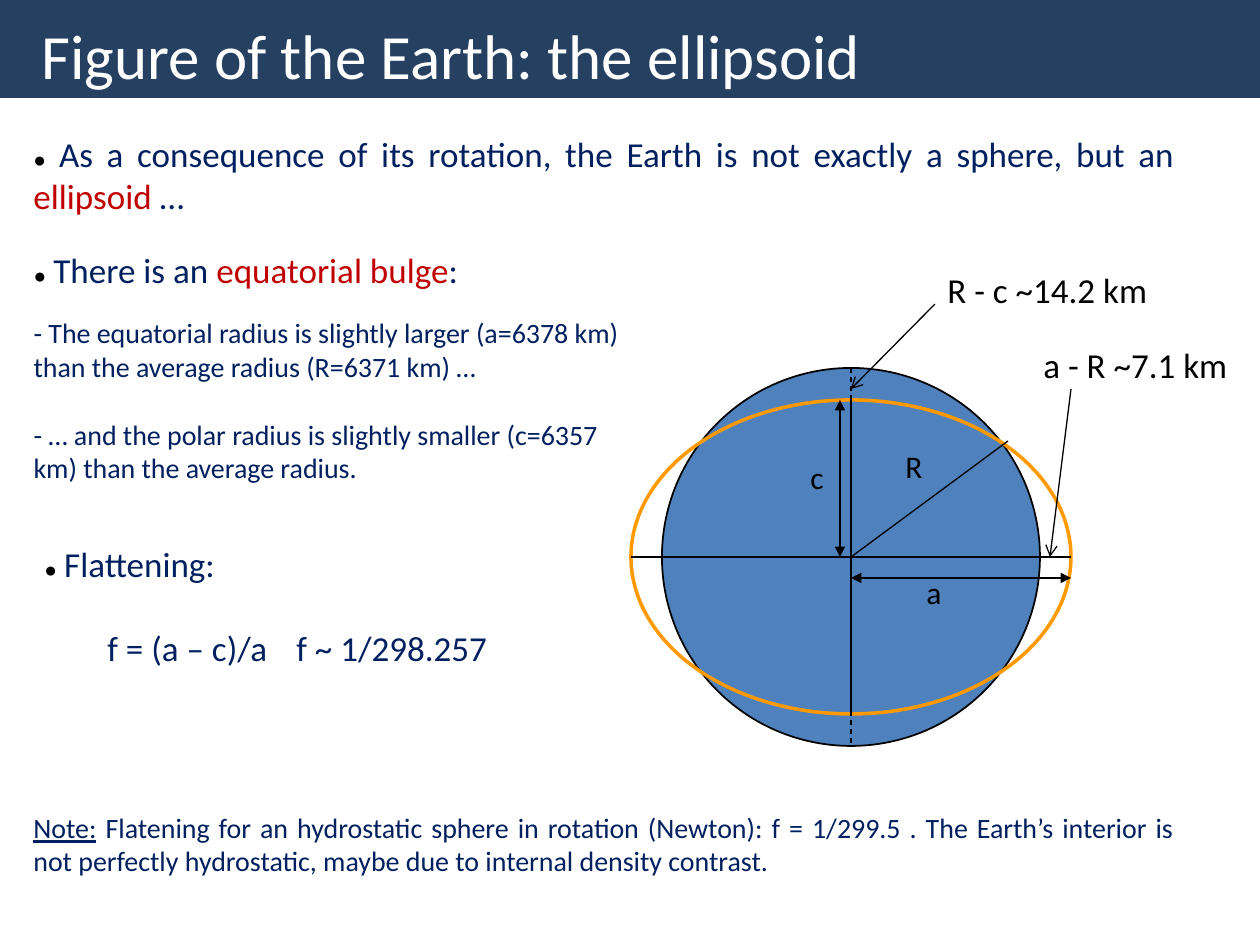
from lxml import etree
from pptx import Presentation
from pptx.dml.color import RGBColor
from pptx.enum.dml import MSO_LINE
from pptx.enum.shapes import MSO_CONNECTOR, MSO_SHAPE
from pptx.enum.text import MSO_ANCHOR, MSO_AUTO_SIZE, PP_ALIGN
from pptx.oxml.ns import qn
from pptx.util import Emu, Pt

LEFT, JUSTIFY = PP_ALIGN.LEFT, PP_ALIGN.JUSTIFY
STRAIGHT, OVAL, RECTANGLE = MSO_CONNECTOR.STRAIGHT, MSO_SHAPE.OVAL, MSO_SHAPE.RECTANGLE
PX_PER_INCH = 126
COLORS = {"navy": "002060", "red": "C00000", "black": "000000", "white": "FFFFFF",
          "bar": "254061", "sphere": "4F81BD", "ellipsoid": "FF9900"}

# Runs are (text, style); a paragraph is (runs, size, space before in points).
TITLE = "Figure of the Earth: the ellipsoid"
BULLET = [("●", "bullet"), (" ", "gap")]
ROTATION = [
    (BULLET + [("As a consequence of its rotation, the Earth is not exactly a sphere, but an ", "plain"),
               ("ellipsoid", "key"), (" …", "plain")], 20, 0),
]
BULGE = [
    (BULLET + [("There is an ", "plain"), ("equatorial bulge", "key"), (":", "plain")], 20, 0),
    ([("- The equatorial radius is slightly larger (a=6378 km) than the average radius "
       "(R=6371 km) …", "plain")], 16, 14.6),
    ([("- … and the polar radius is slightly smaller (c=6357 km) than the average radius.",
       "plain")], 16, 19.5),
]
FLATTENING = [
    (BULLET + [("Flattening:", "plain")], 20, 0),
    ([("\tf = (a – c)/a\tf ~ 1/298.257", "plain")], 20, 24.4),
]
NOTE = [
    ([("Note:", "underlined"),
      (" Flatening for an hydrostatic sphere in rotation (Newton): f = 1/299.5 . The Earth’s "
       "interior is not perfectly hydrostatic, maybe due to internal density contrast.",
       "plain")], 16, 0),
]
FORMULA_TABS = (63, 283)

# Diagram: centre and radii in px
CX, CY = 851, 557
R, A, C = 189, 220, 157
LINES = [  # start, end, head, tail, dashed
    ((CX - A, CY), (CX + A, CY), None, None, False),
    ((CX, CY - R), (CX, CY + R), None, None, True),
    ((CX, CY - C), (CX, CY + C), None, None, False),
    ((CX, CY), (1008, 441), None, None, False),
    ((CX, CY + 21), (CX + A, CY + 21), "triangle", "triangle", False),
    ((CX - 11, CY - C), (CX - 11, CY), "triangle", "triangle", False),
    ((935, 304), (CX, 389), None, "arrow", False),
    ((CX + A, 389), (1050, CY), None, "arrow", False),
]
LABELS = [  # text, box, size
    ("a", (914, 567, 44, 63), 18),
    ("c", (798, 452, 44, 63), 18),
    ("R", (893, 441, 52, 63), 18),
    ("R - c ~14.2 km", (935, 262, 236, 54), 20),
    ("a - R ~7.1 km", (1031, 337, 218, 54), 20),
]


def px(value):
    return Emu(round(value * 914400 / PX_PER_INCH))


def color(name):
    return RGBColor.from_string(COLORS[name])


def place(shape, box):
    shape.left, shape.top, shape.width, shape.height = map(px, box)


def add_text_box(box):
    return slide.shapes.add_textbox(*map(px, box))


def style_font(font, size, name, typeface="Calibri"):
    font.size, font.name, font.color.rgb = Pt(size), typeface, color(name)


def write_paragraphs(shape, paragraphs, align=LEFT):
    frame = shape.text_frame
    frame.word_wrap, frame.auto_size = True, MSO_AUTO_SIZE.NONE
    for index, (runs, size, space) in enumerate(paragraphs):
        paragraph = frame.paragraphs[0] if index == 0 else frame.add_paragraph()
        paragraph.alignment, paragraph.space_before = align, Pt(space)
        style_font(paragraph.font, size, "navy")
        properties = paragraph._p.get_or_add_pPr()
        properties.set("marL", "0")
        properties.set("indent", "0")
        no_bullet = etree.Element(qn("a:buNone"))
        properties.find(qn("a:defRPr")).addprevious(no_bullet)
        if any("\t" in text for text, _ in runs):
            tabs = etree.Element(qn("a:tabLst"))
            no_bullet.addnext(tabs)
            for position in FORMULA_TABS:
                etree.SubElement(tabs, qn("a:tab"), pos=str(px(position)), algn="l")
        for text, style in runs:
            run = paragraph.add_run()
            run.text = text
            if style == "bullet":
                style_font(run.font, 12, "black", "Arial")
            elif style == "gap":
                style_font(run.font, 18, "black")
            else:
                style_font(run.font, size, "red" if style == "key" else "navy")
                if style == "underlined":
                    run.font.underline = True


def add_shape(kind, box, fill=None, line=None, width=1):
    shape = slide.shapes.add_shape(kind, *map(px, box))
    shape.shadow.inherit = False
    if fill:
        shape.fill.solid()
        shape.fill.fore_color.rgb = color(fill)
    else:
        shape.fill.background()
    if line:
        shape.line.color.rgb, shape.line.width = color(line), Pt(width)
    else:
        shape.line.fill.background()
    return shape


def add_ellipse(rx, ry, fill, line, width):
    add_shape(OVAL, (CX - rx, CY - ry, 2 * rx, 2 * ry), fill, line, width)


def add_line(start, end, head, tail, dashed):
    connector = slide.shapes.add_connector(STRAIGHT, *map(px, start + end))
    connector.line.color.rgb, connector.line.width = color("black"), Pt(0.75)
    if dashed:
        connector.line.dash_style = MSO_LINE.DASH
    outline = connector.line._get_or_add_ln()
    for tag, arrow in (("a:headEnd", head), ("a:tailEnd", tail)):
        if arrow:
            etree.SubElement(outline, qn(tag), type=arrow)
    etree.SubElement(connector._element.spPr, qn("a:effectLst"))


presentation = Presentation()
presentation.slide_width, presentation.slide_height = px(1260), px(945)
slide = presentation.slides.add_slide(presentation.slide_layouts[1])
title, body = slide.placeholders

bar = add_shape(RECTANGLE, (0, 0, 1260, 98), "bar")
slide.shapes._spTree.insert(2, bar._element)  # behind the title
place(title, (29, 20, 1200, 68))
title.text_frame.text = TITLE
title.text_frame.vertical_anchor = MSO_ANCHOR.MIDDLE
title.text_frame.auto_size = MSO_AUTO_SIZE.NONE
heading = title.text_frame.paragraphs[0]
heading.alignment = LEFT
style_font(heading.font, 36, "white")

place(body, (21, 242, 633, 251))
write_paragraphs(body, BULGE)
write_paragraphs(add_text_box((21, 126, 1166, 97)), ROTATION, JUSTIFY)
write_paragraphs(add_text_box((32, 536, 567, 140)), FLATTENING)
write_paragraphs(add_text_box((21, 804, 1166, 81)), NOTE, JUSTIFY)

add_ellipse(R, R, "sphere", "black", 1)
add_ellipse(A, C, None, "ellipsoid", 2)
for line in LINES:
    add_line(*line)
for text, box, size in LABELS:
    label = add_text_box(box)
    label.text_frame.text = text
    style_font(label.text_frame.paragraphs[0].font, size, "black")

presentation.save("out.pptx")
